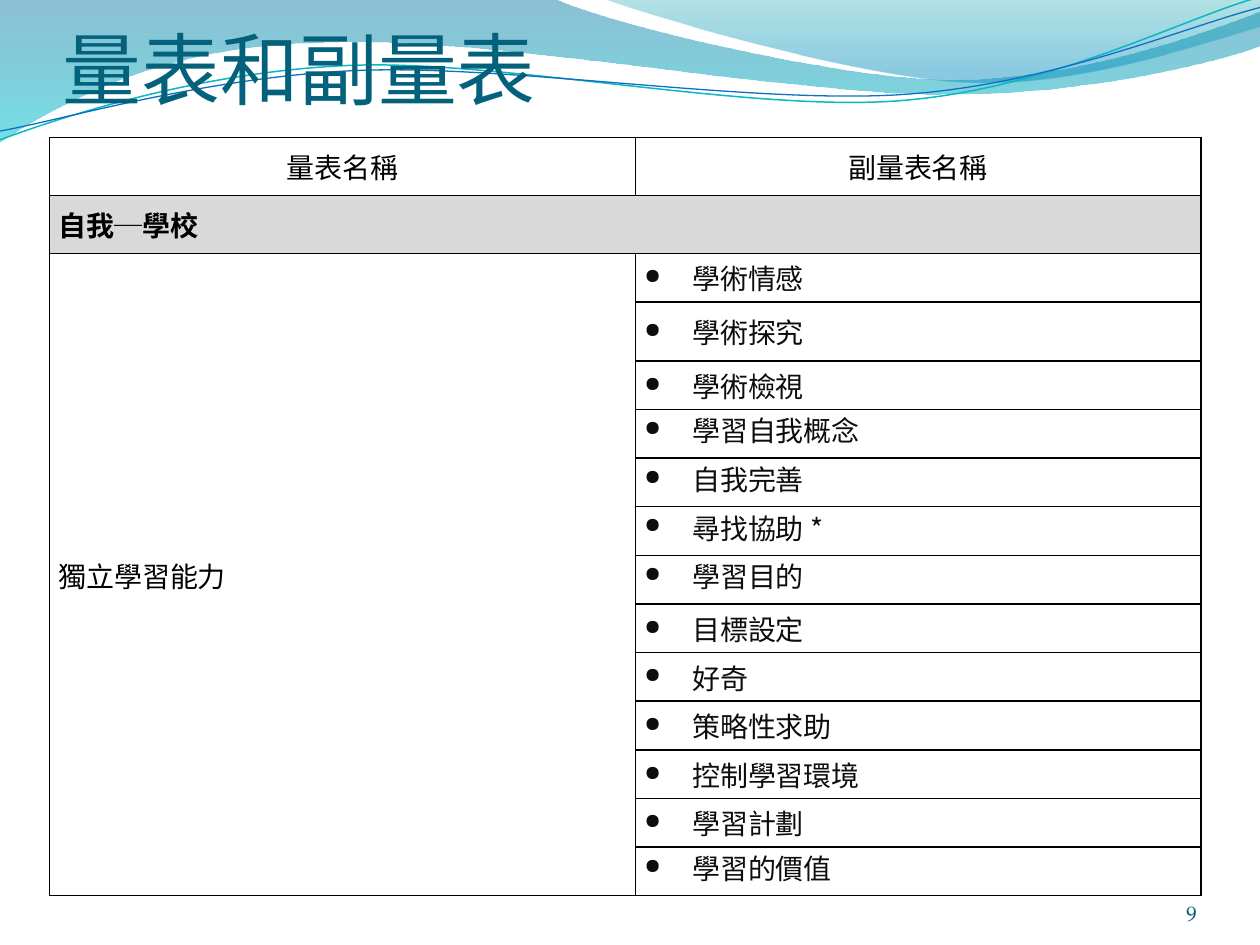
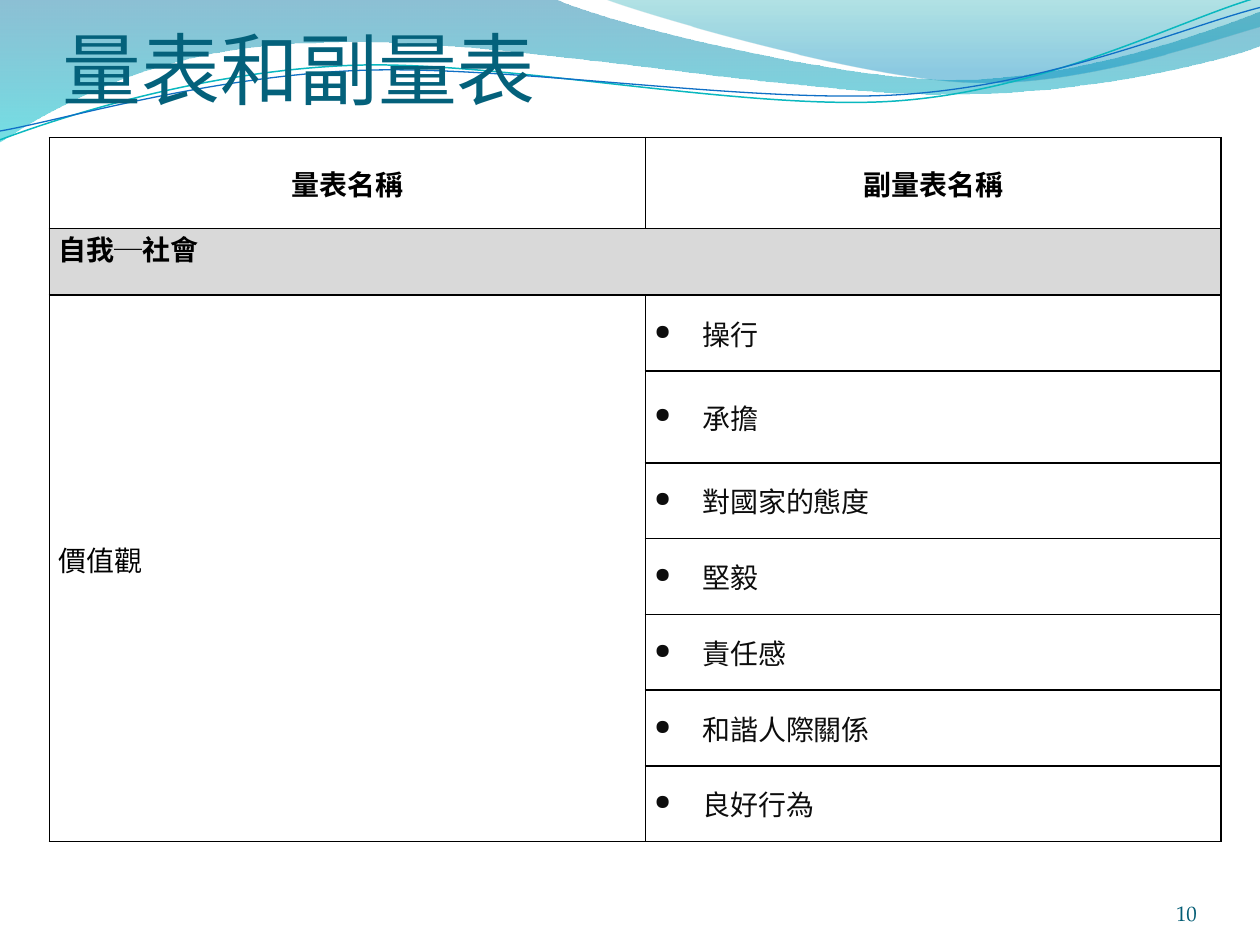
from math import cos, radians, sin

from lxml import etree
from pptx import Presentation
from pptx.dml.color import RGBColor
from pptx.enum.text import MSO_ANCHOR, PP_ALIGN
from pptx.oxml.ns import qn
from pptx.util import Pt

TOP, MIDDLE, BOTTOM = MSO_ANCHOR.TOP, MSO_ANCHOR.MIDDLE, MSO_ANCHOR.BOTTOM
LEFT, CENTER, RIGHT = PP_ALIGN.LEFT, PP_ALIGN.CENTER, PP_ALIGN.RIGHT
JUSTIFY = PP_ALIGN.JUSTIFY

BLACK, INK, GREY = "000000", "0D0D0D", "D9D9D9"
TITLE_COLOR, NUMBER_COLOR = "04617B", "045D75"
CJK, SERIF, SANS, NUMERAL = (
    "Noto Sans CJK TC", "Times New Roman", "Arial", "TeX Gyre Pagella")
TILT = 2.7

# Wave outlines in points: a start, then lines (2 numbers) and curves (6 numbers)
LEFT_WAVE = [
    (0, -0.7), (316.8, -0.7),
    (342.7, 12.2, 478.1, 45.4, 545.8, 45.4), (614.2, 45.4, 689.8, 18.7, 720, 6.5),
    (720.7, 25.9), (707.8, 31.7, 626.4, 54.7, 537.1, 54),
    (447.8, 54, 275, 20.2, 185, 24.5), (92.9, 25.2, 33.1, 59.8, -0.7, 81.4),
    (0, -0.7)]
RIGHT_WAVE = [
    (344.9, -0.7), (366.5, 7.9, 491, 44.6, 553.7, 46.8),
    (616.3, 49.7, 691.9, 23, 720, 15.1), (720, 0), (344.9, -0.7)]
TEAL_LINE = [
    (0, 79.9), (34.6, 67, 113.8, 41, 199.4, 37.4),
    (284.4, 33.8, 427, 64.1, 513.4, 57.6), (599.8, 51.1, 675.4, 10.8, 718.6, -1.4)]
BLUE_LINE = [
    (0, 74.9), (33.8, 69.1, 118.1, 43.9, 203.8, 40.3),
    (290.2, 36.7, 429.8, 59.8, 516.2, 54), (601.9, 48.2, 677.5, 15.1, 720, 4.3)]


def color(code):
    return RGBColor.from_string(code)


def turn(point, center, degrees):
    """Turn a point clockwise about a center."""
    angle = radians(degrees)
    x, y = point[0] - center[0], point[1] - center[1]
    return (center[0] + x * cos(angle) - y * sin(angle),
            center[1] + x * sin(angle) + y * cos(angle))


class Deck:
    def __init__(self):
        self.deck = Presentation()
        self.deck.slide_width, self.deck.slide_height = Pt(720), Pt(540)
        self.page = None

    def add_page(self, number):
        self.page = self.deck.slides.add_slide(self.deck.slide_layouts[6])
        self.wave(LEFT_WAVE, [(0, "0074A1", 45), (1, "00C6CF", 55)])
        self.wave(RIGHT_WAVE, [(0, "00A1A9", 30), (0.8, "008BBF", 45)])
        self.curve(TEAL_LINE, (359.3, 41.4), "0AB8BF", 0.85)
        self.curve(BLUE_LINE, (359.6, 42.5), "0F6FC6", 0.75)
        self.text("量表和副量表", (36, 16.4, 648, 49.7), 45, SANS, TITLE_COLOR, LEFT, 3.6)
        self.text(str(number), (624.2, 500.4, 59.8, 28.8), 12, NUMERAL, NUMBER_COLOR, RIGHT)

    def outline(self, outline, close, center=(0, 0), tilt=0):
        points = [turn(step[i:i + 2], center, tilt)
                  for step in outline for i in range(0, len(step), 2)]
        points = [(Pt(x), Pt(y)) for x, y in points]
        builder = self.page.shapes.build_freeform(*points[0])
        builder.add_line_segments(points[1:], close=close)
        shape = builder.convert_to_shape()
        shape.shadow.inherit = False
        shape.rotation = -tilt % 360

        # Gather each three control points into one cubic curve
        segments = iter(list(shape._element.spPr.iter(qn("a:lnTo"))))
        for step in outline[1:]:
            segment = next(segments)
            if len(step) == 6:
                segment.tag = qn("a:cubicBezTo")
                for _ in range(2):
                    extra = next(segments)
                    segment.append(extra[0])
                    extra.getparent().remove(extra)
        return shape

    def wave(self, outline, stops):
        shape = self.outline(outline, True)
        shape.line.fill.background()
        shape.fill.gradient()
        shape.fill.gradient_angle = 270
        for stop, (position, code, _) in zip(shape.fill.gradient_stops, stops):
            stop.position = position
            stop.color.rgb = color(code)
        tints = shape._element.spPr.iter(qn("a:srgbClr"))
        for tint, (_, _, opacity) in zip(tints, stops):
            etree.SubElement(tint, qn("a:alpha"), val=str(opacity * 1000))

    def curve(self, outline, center, code, width):
        shape = self.outline(outline, False, center, TILT)
        shape.fill.background()
        shape.line.color.rgb = color(code)
        shape.line.width = Pt(width)

    def style(self, para, size, face, code, align, bold=False):
        para.alignment = align
        font = para.font
        font.size, font.name, font.bold = Pt(size), face, bold
        font.color.rgb = color(code)
        latin = para._p.pPr.find(qn("a:defRPr")).find(qn("a:latin"))
        latin.addnext(latin.makeelement(qn("a:ea"), {"typeface": CJK}))

    def text(self, words, place, size, face, code, align, top=0):
        box = self.page.shapes.add_textbox(*map(Pt, place))
        frame = box.text_frame
        frame.word_wrap = True
        frame.vertical_anchor = BOTTOM
        frame.margin_left = frame.margin_right = frame.margin_bottom = 0
        frame.margin_top = Pt(top)
        frame.text = words
        self.style(frame.paragraphs[0], size, face, code, align)

    def cell(self, cell, words="", face=CJK, code=BLACK, align=LEFT, bold=False,
             anchor=MIDDLE, fill=None, sides="LRTB", bullet=False):
        cell.margin_left = cell.margin_right = Pt(5.2)
        cell.margin_top = cell.margin_bottom = 0
        cell.vertical_anchor = anchor
        cell.text = words
        para = cell.text_frame.paragraphs[0]
        self.style(para, 16, face, code, align, bold)
        if bullet:
            props = para._p.pPr
            props.set("marL", str(Pt(27.4)))
            props.set("indent", str(-Pt(27.4)))
            props.insert(0, props.makeelement(qn("a:buSzPct"), {"val": "75000"}))
            props.insert(1, props.makeelement(qn("a:buChar"), {"char": "●"}))
        if fill:
            cell.fill.solid()
            cell.fill.fore_color.rgb = color(fill)
        else:
            cell.fill.background()
        self.borders(cell, sides)

    def borders(self, cell, sides):
        props = cell._tc.get_or_add_tcPr()
        for place, side in enumerate("LRTB"):
            line = props.makeelement(qn("a:ln" + side), {"w": str(Pt(1))})
            props.insert(place, line)
            if side in sides:
                paint = etree.SubElement(line, qn("a:solidFill"))
                etree.SubElement(paint, qn("a:srgbClr"), val=BLACK)
            else:
                etree.SubElement(line, qn("a:noFill"))

    def scale_table(self, widths, heights, section, scale, subscales,
                    header_face, header_bold, section_anchor, top_items=()):
        """Header row, shaded section row, then one row for each subscale."""
        frame = self.page.shapes.add_table(
            len(heights), 2, Pt(28.2), Pt(78.7), Pt(sum(widths)), Pt(sum(heights)))
        table = frame.table
        table.first_row = table.horz_banding = False
        for column, width in zip(table.columns, widths):
            column.width = Pt(width)
        for row, height in zip(table.rows, heights):
            row.height = Pt(height)

        # Header and section
        for column, words in enumerate(("量表名稱", "副量表名稱")):
            self.cell(table.cell(0, column), words, header_face,
                      align=CENTER, bold=header_bold)
        table.cell(1, 0).merge(table.cell(1, 1))
        self.cell(table.cell(1, 0), section, bold=True, anchor=section_anchor, fill=GREY)
        self.borders(table.cell(1, 1), "LRTB")

        # The scale stands in the middle row of an open column
        last = len(subscales) - 1
        for i, subscale in enumerate(subscales):
            sides = "LR" + "T" * (i == 0) + "B" * (i == last)
            self.cell(table.cell(i + 2, 0), scale if i == len(subscales) // 2 else "",
                      SERIF, anchor=TOP, sides=sides)
            self.cell(table.cell(i + 2, 1), subscale, code=INK, align=JUSTIFY,
                      anchor=TOP if i in top_items else MIDDLE, bullet=True)


def main():
    slides = Deck()

    # Self and school
    slides.add_page(9)
    slides.scale_table(
        (334.8, 323.3), [33.1, 33.1, 27.8, 33.6] + [27.8] * 11,
        "自我─學校", "獨立學習能力",
        ["學術情感", "學術探究", "學術檢視", "學習自我概念", "自我完善", "尋找協助 *",
         "學習目的", "目標設定", "好奇", "策略性求助", "控制學習環境", "學習計劃",
         "學習的價值"],
        SERIF, False, MIDDLE, top_items=(3, 4, 5, 6, 12))

    # Self and society
    slides.add_page(10)
    slides.scale_table(
        (340.6, 329), [51.8, 38.2, 43.3, 52.6] + [43.3] * 5,
        "自我─社會", "價值觀",
        ["操行", "承擔", "對國家的態度", "堅毅", "責任感", "和諧人際關係", "良好行為"],
        CJK, True, TOP)

    slides.deck.save("out.pptx")


if __name__ == "__main__":
    main()
